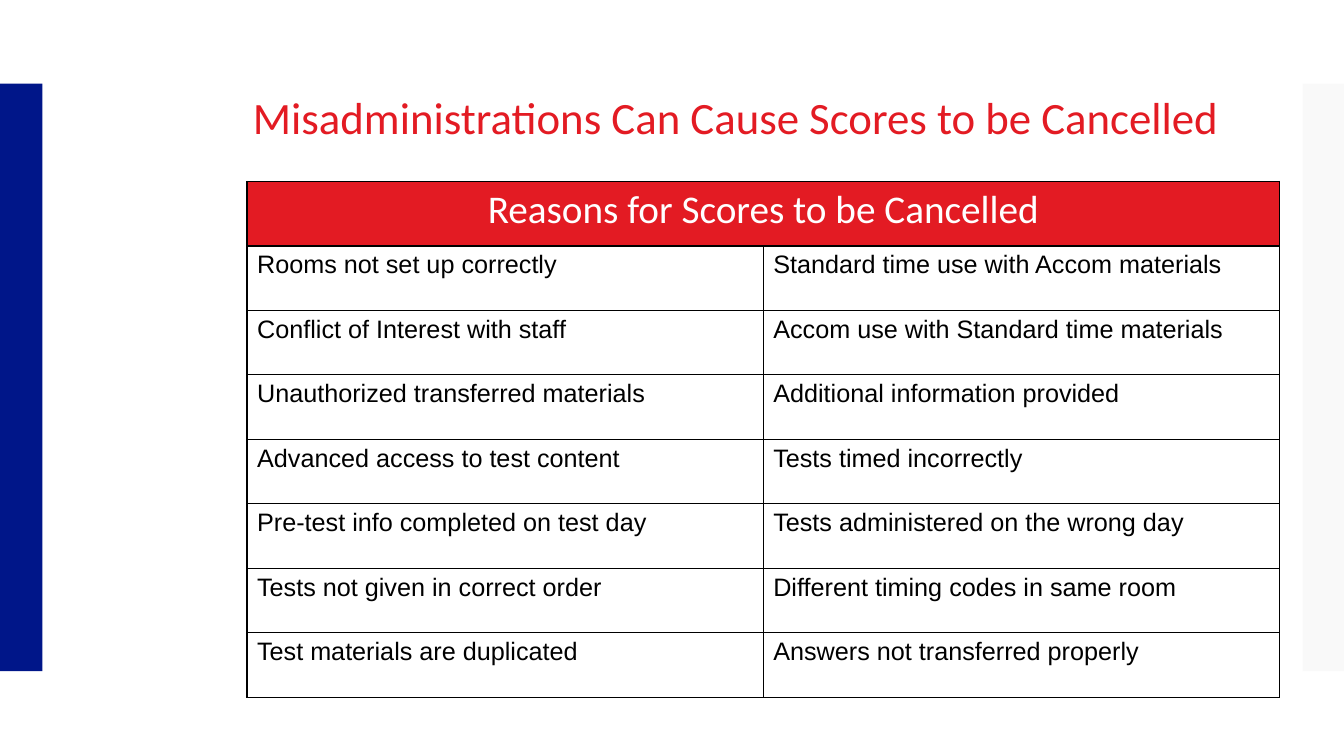
import pptx
import pptx.dml.color
import pptx.enum.shapes
import pptx.enum.text
import pptx.oxml
import pptx.oxml.ns
import pptx.util

RGB = pptx.dml.color.RGBColor
ALIGN = pptx.enum.text.PP_ALIGN
NAVY = RGB(0x00, 0x16, 0x89)
PALE = RGB(0xF4, 0xF4, 0xF4)
RED = RGB(0xE3, 0x1B, 0x23)
WHITE = RGB(0xFF, 0xFF, 0xFF)
BLACK = RGB(0x00, 0x00, 0x00)

PX = 9144  # 100 px to the inch
WIDE, HIGH = 1333, 750
ROW, COL = 64, 512

TITLE = {"name": "Calibri", "size": pptx.util.Pt(32), "color": RED}
HEAD = {"name": "Calibri", "size": pptx.util.Pt(28), "color": WHITE}
BODY = {"name": "Arial", "size": pptx.util.Pt(18), "color": BLACK}

REASONS = [
    ("Rooms not set up correctly", "Standard time use with Accom materials"),
    ("Conflict of Interest with staff", "Accom use with Standard time materials"),
    ("Unauthorized transferred materials", "Additional information provided"),
    ("Advanced access to test content", "Tests timed incorrectly"),
    ("Pre-test info completed on test day", "Tests administered on the wrong day"),
    ("Tests not given in correct order", "Different timing codes in same room"),
    ("Test materials are duplicated", "Answers not transferred properly"),
]


def px(*sizes):
    return [pptx.util.Emu(size * PX) for size in sizes]


def write(frame, text, look, align=ALIGN.LEFT):
    para = frame.paragraphs[0]
    para.alignment = align
    run = para.add_run()
    run.text = text
    for key, value in look.items():
        if key == "color":
            run.font.color.rgb = value
        else:
            setattr(run.font, key, value)
    return para


def add_title(slide, text):
    title = slide.shapes.title
    title.left, title.top, title.width, title.height = px(127, 65, 1206, 83)
    frame = title.text_frame
    frame.word_wrap = True
    frame.auto_size = pptx.enum.text.MSO_AUTO_SIZE.NONE
    frame.vertical_anchor = pptx.enum.text.MSO_ANCHOR.BOTTOM
    write(frame, text, TITLE, ALIGN.CENTER).line_spacing = 0.9


def add_bar(slide, left, color, alpha=100):
    """Draw a side bar; alpha is its opacity in percent."""
    kind = pptx.enum.shapes.MSO_SHAPE.RECTANGLE
    bar = slide.shapes.add_shape(kind, *px(left, 83, 42, 583))
    bar.shadow.inherit = False
    bar.fill.solid()
    bar.fill.fore_color.rgb = color
    bar.line.fill.background()
    if alpha < 100:
        tone = bar.fill._xPr.find(".//" + pptx.oxml.ns.qn("a:srgbClr"))
        pptx.oxml.ns.qn("a:alpha")
        tone.append(pptx.oxml.parse_xml(
            f'<a:alpha {pptx.oxml.ns.nsdecls("a")} val="{alpha * 1000}"/>'))


def frame_cell(cell):
    """Put a thin black border on all four sides."""
    props = cell._tc.get_or_add_tcPr()
    for spot, side in enumerate(("lnL", "lnR", "lnT", "lnB")):
        props.insert(spot, pptx.oxml.parse_xml(
            f'<a:{side} {pptx.oxml.ns.nsdecls("a")} w="12700">'
            f'<a:solidFill><a:srgbClr val="{BLACK}"/></a:solidFill></a:{side}>'))


def add_grid(slide, head, rows):
    count = len(rows) + 1
    box = px(245, 180, 2 * COL, count * ROW)
    grid = slide.shapes.add_table(count, 2, *box).table
    for col in grid.columns:
        col.width = px(COL)[0]
    for row in grid.rows:
        row.height = px(ROW)[0]
    for cell in grid.iter_cells():
        cell.fill.background()
        frame_cell(cell)
    top = grid.cell(0, 0)
    top.merge(grid.cell(0, 1))
    top.fill.solid()
    top.fill.fore_color.rgb = RED
    write(top.text_frame, head, HEAD, ALIGN.CENTER)
    for r, texts in enumerate(rows, 1):
        for c, text in enumerate(texts):
            write(grid.cell(r, c).text_frame, text, BODY)


def main():
    deck = pptx.Presentation()
    deck.slide_width, deck.slide_height = px(WIDE, HIGH)
    slide = deck.slides.add_slide(deck.slide_layouts[5])
    add_bar(slide, 0, NAVY)
    add_bar(slide, WIDE - 41, PALE, 50)
    add_grid(slide, "Reasons for Scores to be Cancelled", REASONS)
    add_title(slide, "Misadministrations Can Cause Scores to be Cancelled")
    deck.save("out.pptx")


if __name__ == "__main__":
    main()
